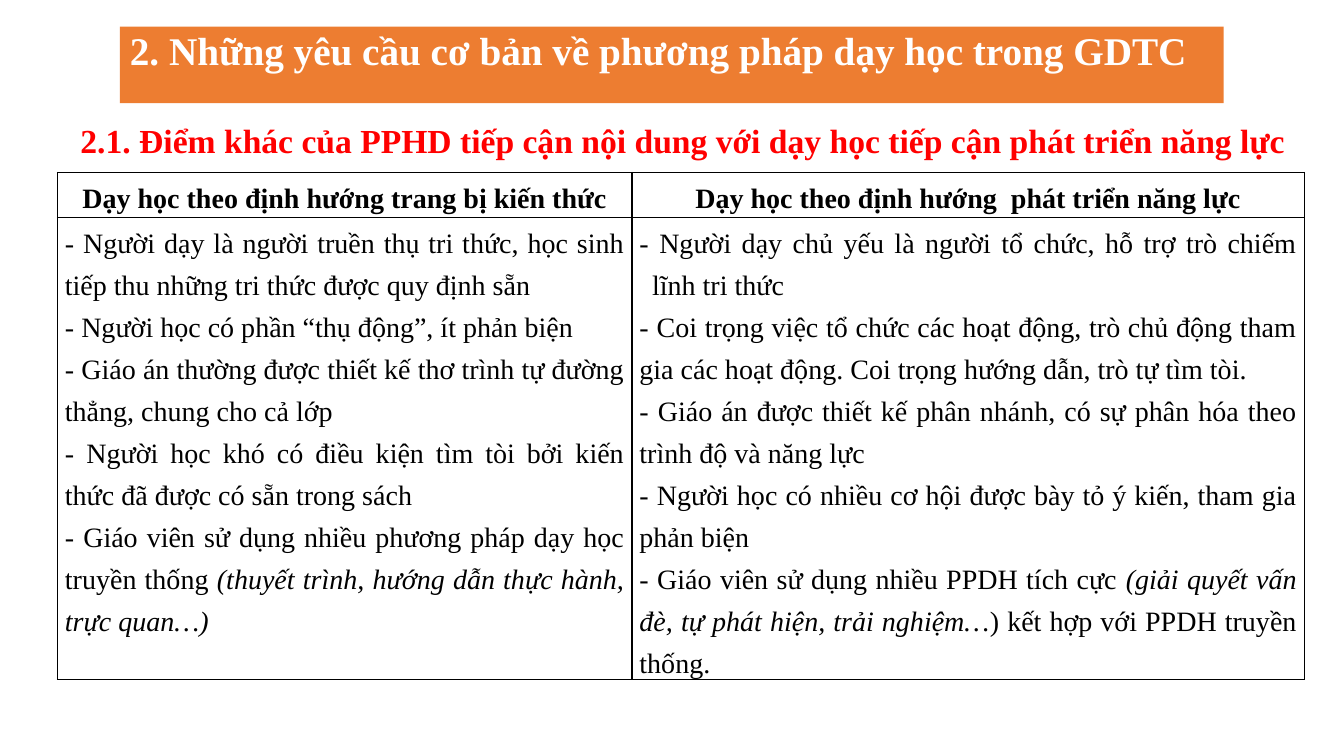
from lxml import etree
from pptx import Presentation
from pptx.dml.color import RGBColor
from pptx.enum import shapes, text
from pptx.oxml import ns
from pptx.util import Pt

# Content: a paragraph is a list of (words, italic) runs
TITLE = "2. Những yêu cầu cơ bản về phương pháp dạy học trong GDTC"
SUBTITLE = "2.1. Điểm khác của PPHD tiếp cận nội dung với dạy học tiếp cận phát triển năng lực"
HEADERS = [
    "Dạy học theo định hướng trang bị kiến thức",
    "Dạy học theo định hướng  phát triển năng lực",
]
KNOWLEDGE = [
    [("- Người dạy là người truền thụ tri thức, học sinh tiếp thu những tri thức được quy định sẵn", False)],
    [("- Người học có phần “thụ động”, ít phản biện", False)],
    [("- Giáo án thường được thiết kế thơ trình tự đường thẳng, chung cho cả lớp", False)],
    [("- Người học khó có điều kiện tìm tòi bởi kiến thức đã được có sẵn trong sách", False)],
    [("- Giáo viên sử dụng nhiều phương pháp dạy học truyền thống ", False),
     ("(thuyết trình, hướng dẫn thực hành, trực quan…)", True)],
]
COMPETENCE = [
    [("- Người dạy chủ yếu là người tổ chức, hỗ trợ trò chiếm lĩnh tri thức", False)],
    [("- Coi trọng việc tổ chức các hoạt động, trò chủ động tham gia các hoạt động. "
      "Coi trọng hướng dẫn, trò tự tìm tòi.", False)],
    [("- Giáo án được thiết kế phân nhánh, có sự phân hóa theo trình độ và năng lực", False)],
    [("- Người học có nhiều cơ hội được bày tỏ ý kiến, tham gia phản biện", False)],
    [("- Giáo viên sử dụng nhiều PPDH tích cực ", False),
     ("(giải quyết vấn đè, tự phát hiện, trải nghiệm…", True),
     (") kết hợp với PPDH truyền thống.", False)],
]

THEME = {
    "font": "Times New Roman",
    "banner": "ED7D31", "white": "FFFFFF", "red": "FF0000", "black": "000000",
    "title": 28, "subtitle": 24, "body": 20,
}
ALIGN = text.PP_ALIGN
COLUMN_WIDTHS = [410.4, 480.3]
ROW_HEIGHTS = [32.4, 330]


def color(name):
    return RGBColor.from_string(THEME[name])


def write(frame, paragraphs, *, size, ink, bold=False, align=ALIGN.LEFT,
          line=None, before=None, hanging=0):
    """Fill a text frame; the hanging indent applies to its first paragraph."""
    frame.word_wrap = True
    frame.vertical_anchor = text.MSO_ANCHOR.TOP
    if isinstance(paragraphs, str):
        paragraphs = [[(paragraphs, False)]]
    for index, runs in enumerate(paragraphs):
        paragraph = frame.add_paragraph() if index else frame.paragraphs[0]
        paragraph.alignment = align
        if line is not None:
            paragraph.line_spacing = line
        if before is not None:
            paragraph.space_before = Pt(before)
        if hanging and index == 0:
            properties = paragraph._p.get_or_add_pPr()
            properties.set("marL", str(Pt(hanging)))
            properties.set("indent", str(-Pt(hanging)))
        for words, italic in runs:
            run = paragraph.add_run()
            run.text = words
            run.font.name = THEME["font"]
            run.font.size = Pt(THEME[size])
            run.font.color.rgb = color(ink)
            run.font.bold = bold
            run.font.italic = italic


def outline(cell):
    """Draw a 1 pt line on all four sides of a cell."""
    properties = cell._tc.get_or_add_tcPr()
    for index, side in enumerate(("lnL", "lnR", "lnT", "lnB")):
        border = etree.Element(ns.qn(f"a:{side}"), w=str(Pt(1)))
        fill = etree.SubElement(border, ns.qn("a:solidFill"))
        etree.SubElement(fill, ns.qn("a:srgbClr"), val=THEME["black"])
        properties.insert(index, border)


def add_headings(slide):
    # Title banner
    banner = slide.shapes.add_shape(shapes.MSO_SHAPE.RECTANGLE,
                                    Pt(85.7), Pt(19), Pt(788.4), Pt(54.7))
    banner.shadow.inherit = False
    banner.fill.solid()
    banner.fill.fore_color.rgb = color("banner")
    banner.line.fill.background()
    write(banner.text_frame, TITLE, size="title", ink="white", bold=True,
          align=ALIGN.JUSTIFY, line=0.9, before=10, hanging=18)

    # Subtitle
    subtitle = slide.shapes.add_textbox(Pt(50.4), Pt(82.3), Pt(875.5), Pt(36))
    write(subtitle.text_frame, SUBTITLE, size="subtitle", ink="red", bold=True)
    subtitle.text_frame.auto_size = text.MSO_AUTO_SIZE.SHAPE_TO_FIT_TEXT


def add_comparison(slide):
    table = slide.shapes.add_table(2, 2, Pt(41), Pt(123.1), Pt(sum(COLUMN_WIDTHS)),
                                   Pt(sum(ROW_HEIGHTS))).table
    table.first_row = table.horz_banding = False
    for column, width in zip(table.columns, COLUMN_WIDTHS):
        column.width = Pt(width)
    for row, height in zip(table.rows, ROW_HEIGHTS):
        row.height = Pt(height)

    for cell in table.iter_cells():
        cell.margin_left = cell.margin_right = Pt(5.4)
        cell.margin_top = cell.margin_bottom = 0
        cell.fill.background()
        outline(cell)

    for column, (header, points, hanging) in enumerate(
            zip(HEADERS, (KNOWLEDGE, COMPETENCE), (0, 9))):
        write(table.cell(0, column).text_frame, header, size="body", ink="black",
              bold=True, align=ALIGN.CENTER, line=Pt(30))
        write(table.cell(1, column).text_frame, points, size="body", ink="black",
              align=ALIGN.JUSTIFY, line=Pt(30), hanging=hanging)


def main():
    presentation = Presentation()
    presentation.slide_width, presentation.slide_height = Pt(960), Pt(540)
    slide = presentation.slides.add_slide(presentation.slide_layouts[6])
    add_headings(slide)
    add_comparison(slide)
    presentation.save("out.pptx")


if __name__ == "__main__":
    main()
